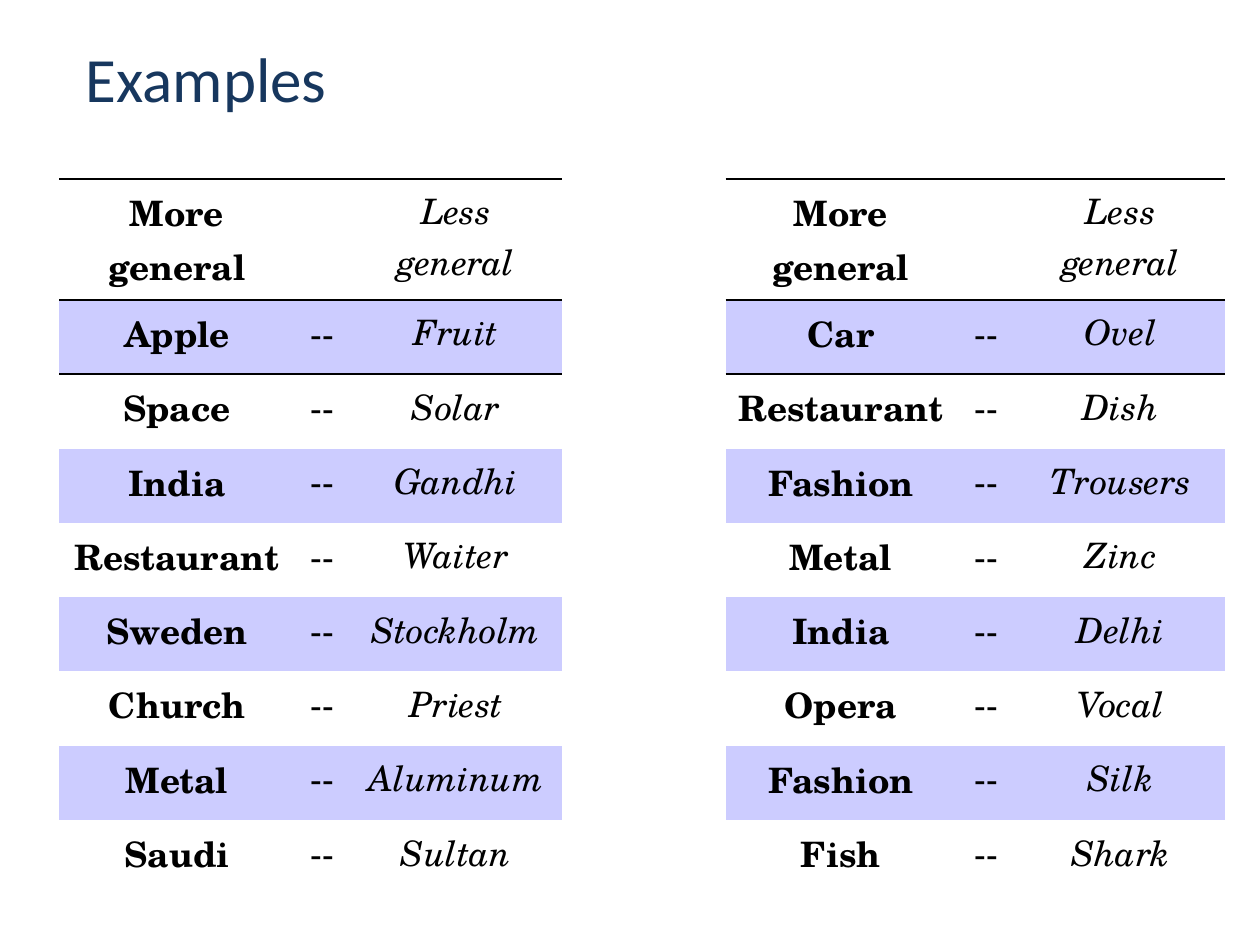
from dataclasses import dataclass
from typing import NamedTuple

import lxml.etree
import pptx
import pptx.dml.color
import pptx.enum.text
import pptx.oxml.ns
import pptx.util

Inches = pptx.util.Inches
qn = pptx.oxml.ns.qn


@dataclass(frozen=True)
class Theme:
    title_font: str = "Calibri"
    title_size: int = 36
    title_color: str = "17375E"
    table_font: str = "TeX Gyre Schola"
    table_size: int = 20
    text_color: str = "000000"
    band_color: str = "CCCCFF"
    rule_color: str = "000000"
    rule_width: float = 1


class Pair(NamedTuple):
    general: str
    specific: str
    separator: str = "--"


class Block(NamedTuple):
    first_column: int
    pairs: list[Pair]


THEME = Theme()
NO_STYLE_NO_GRID = "{2D5ABB26-0587-4C30-8999-92F81FD0307C}"
COLUMN_WIDTHS = (1.87, 0.44, 1.68, 1.3, 1.83, 0.48, 1.65)
ROW_HEIGHT = 0.59
TABLE_HEIGHT = 5.49
HEADER = Pair("More general", "Less general", "")
BLOCKS = (
    Block(0, [
        HEADER,
        Pair("Apple", "Fruit"),
        Pair("Space", "Solar"),
        Pair("India", "Gandhi"),
        Pair("Restaurant", "Waiter"),
        Pair("Sweden", "Stockholm"),
        Pair("Church", "Priest"),
        Pair("Metal", "Aluminum"),
        Pair("Saudi", "Sultan"),
    ]),
    Block(4, [
        HEADER,
        Pair("Car", "Ovel"),
        Pair("Restaurant", "Dish"),
        Pair("Fashion", "Trousers"),
        Pair("Metal", "Zinc"),
        Pair("India", "Delhi"),
        Pair("Opera", "Vocal"),
        Pair("Fashion", "Silk"),
        Pair("Fish", "Shark"),
    ]),
)


def format_font(font, name: str, size: int, color: str) -> None:
    font.name = name
    font.size = pptx.util.Pt(size)
    font.color.rgb = pptx.dml.color.RGBColor.from_string(color)


def add_title(slide, text: str) -> None:
    title = slide.shapes.title
    title.left, title.top = Inches(0.58), Inches(0.23)
    title.width, title.height = Inches(9.17), Inches(0.77)
    title.text_frame.text = text
    title.text_frame.vertical_anchor = pptx.enum.text.MSO_ANCHOR.MIDDLE
    paragraph = title.text_frame.paragraphs[0]
    paragraph.alignment = pptx.enum.text.PP_ALIGN.LEFT
    format_font(paragraph.runs[0].font, THEME.title_font, THEME.title_size, THEME.title_color)


def add_rule(cell, side: str) -> None:
    """Draw a cell border; side is "T" or "B". Call before setting the fill."""
    properties = cell._tc.get_or_add_tcPr()
    width = str(pptx.util.Pt(THEME.rule_width))
    line = lxml.etree.SubElement(properties, qn(f"a:ln{side}"), w=width)
    fill = lxml.etree.SubElement(line, qn("a:solidFill"))
    lxml.etree.SubElement(fill, qn("a:srgbClr"), val=THEME.rule_color)


def write_cell(cell, text: str, bold: bool, italic: bool) -> None:
    cell.text_frame.text = text
    paragraph = cell.text_frame.paragraphs[0]
    paragraph.alignment = pptx.enum.text.PP_ALIGN.CENTER
    spacing = lxml.etree.SubElement(paragraph._p.get_or_add_pPr(), qn("a:spcBef"))
    lxml.etree.SubElement(spacing, qn("a:spcPct"), val="20000")
    for run in paragraph.runs:
        format_font(run.font, THEME.table_font, THEME.table_size, THEME.text_color)
        run.font.bold = bold
        run.font.italic = italic


def fill_block(table, block: Block) -> None:
    for row, pair in enumerate(block.pairs):
        texts = (pair.general, pair.separator, pair.specific)
        for offset, text in enumerate(texts):
            cell = table.cell(row, block.first_column + offset)
            if row <= 1:
                add_rule(cell, "T")
            if row == 0:
                add_rule(cell, "B")
            if row % 2:
                cell.fill.solid()
                cell.fill.fore_color.rgb = pptx.dml.color.RGBColor.from_string(THEME.band_color)
            else:
                cell.fill.background()
            if text:
                write_cell(cell, text, bold=offset == 0, italic=offset == 2)


def add_examples_table(slide) -> None:
    row_count = len(BLOCKS[0].pairs)
    frame = slide.shapes.add_table(
        row_count, len(COLUMN_WIDTHS), Inches(0.47), Inches(1.42),
        Inches(sum(COLUMN_WIDTHS)), Inches(TABLE_HEIGHT),
    )
    table = frame.table
    table.first_row = False
    table.horz_banding = False
    table._tbl.tblPr.find(qn("a:tableStyleId")).text = NO_STYLE_NO_GRID
    for column, width in zip(table.columns, COLUMN_WIDTHS):
        column.width = Inches(width)
    for row in table.rows:
        row.height = Inches(ROW_HEIGHT)
    frame.height = Inches(TABLE_HEIGHT)
    for block in BLOCKS:
        fill_block(table, block)


def main() -> None:
    presentation = pptx.Presentation()
    presentation.slide_width, presentation.slide_height = Inches(10), Inches(7.5)
    slide = presentation.slides.add_slide(presentation.slide_layouts.get_by_name("Title Only"))
    add_title(slide, "Examples")
    add_examples_table(slide)
    presentation.save("out.pptx")


if __name__ == "__main__":
    main()
